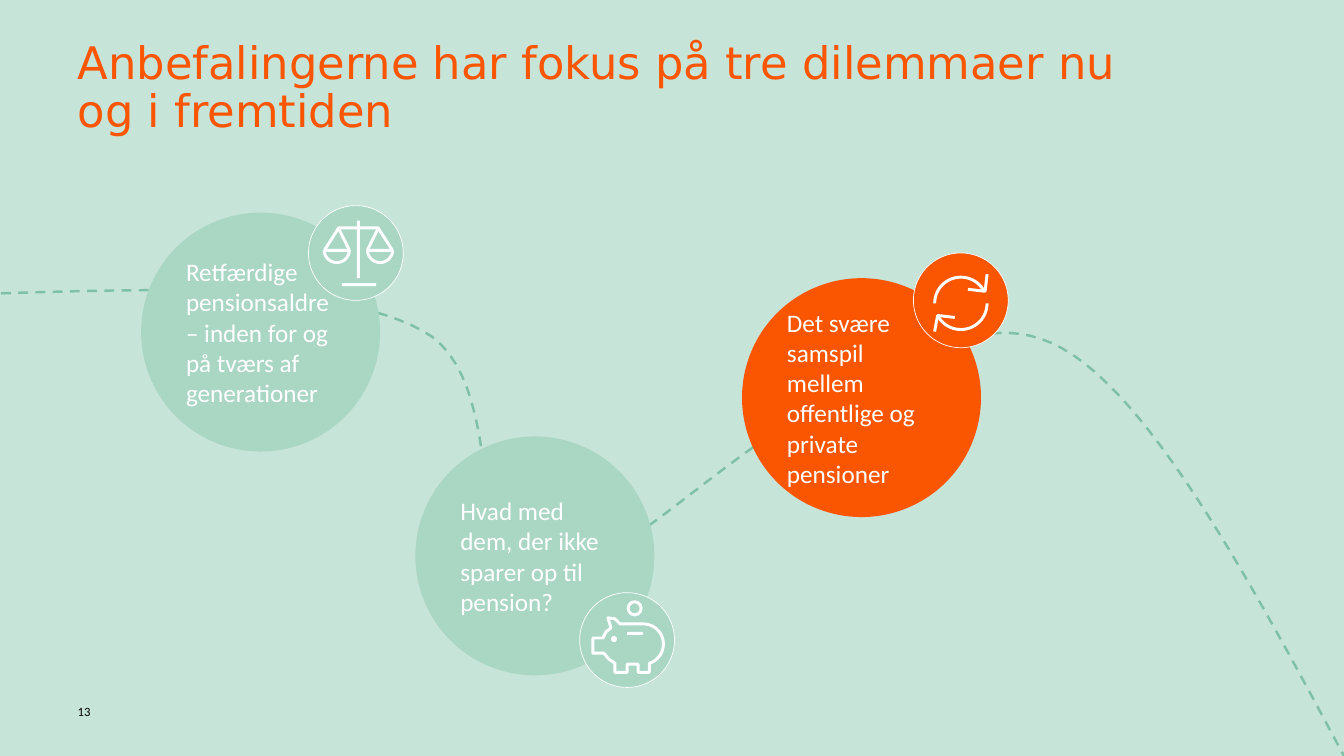
import math
from pptx import Presentation
from pptx import util as u
from pptx.dml.color import RGBColor
from pptx.enum import dml, shapes, text

MINT = RGBColor(0xC7, 0xE4, 0xD8)
SAGE = RGBColor(0xAA, 0xD6, 0xC4)
GREEN = RGBColor(0x7F, 0xC1, 0xA6)
ORANGE = RGBColor(0xFA, 0x55, 0x00)
WHITE = RGBColor(0xFF, 0xFF, 0xFF)
BLACK = RGBColor(0, 0, 0)
STROKE = 2.1

ROUTE = [
    (0.01, 2.91),
    (1.66, 2.86), (3.31, 2.81), (4.19, 3.28),
    (5.06, 3.75), (4.6, 5.63), (5.26, 5.75),
    (5.92, 5.88), (7.26, 4.4), (8.16, 4.03),
    (9.05, 3.66), (9.77, 2.94), (10.64, 3.52),
    (11.5, 4.1), (12.42, 5.8), (13.33, 7.5),
]
DILEMMAS = [
    (1.4, 2.11, SAGE, 0.1,
     "Retfærdige pensionsaldre – inden for og på tværs af generationer"),
    (4.12, 4.33, SAGE, 0.1, "Hvad med dem, der ikke sparer op til pension?"),
    (7.36, 2.76, ORANGE, 0,
     "Det svære samspil mellem\voffentlige og private pensioner"),
]
BADGES = [(3.06, 2.04, SAGE), (9.06, 2.51, ORANGE), (5.75, 5.88, SAGE)]


def style(font, size, color, name="Calibri"):
    font.name = name
    font.size = u.Pt(size)
    font.color.rgb = color


def inset(frame, left=0, top=0, right=0, bottom=0):
    frame.margin_left = u.Inches(left)
    frame.margin_top = u.Inches(top)
    frame.margin_right = u.Inches(right)
    frame.margin_bottom = u.Inches(bottom)


def curve(nodes, steps=24):
    points = [nodes[0]]
    for i in range(0, len(nodes) - 1, 3):
        a, b, c, d = nodes[i:i + 4]
        for k in range(1, steps + 1):
            t = k / steps
            s = 1 - t
            points.append(tuple(
                s**3 * p + 3 * s * s * t * q + 3 * s * t * t * r + t**3 * v
                for p, q, r, v in zip(a, b, c, d)))
    return points


def arc(x, y, radius, start, end, steps=24):
    angles = [math.radians(start + (end - start) * k / steps)
              for k in range(steps + 1)]
    return [(x + radius * math.cos(a), y + radius * math.sin(a))
            for a in angles]


def stroke(parent, points, color=WHITE, width=STROKE, close=False):
    spots = [(u.Inches(x), u.Inches(y)) for x, y in points]
    builder = parent.build_freeform(*spots[0])
    builder.add_line_segments(spots[1:], close=close)
    shape = builder.convert_to_shape()
    shape.shadow.inherit = False
    shape.fill.background()
    shape.line.color.rgb = color
    shape.line.width = u.Pt(width)
    return shape


def solid(parent, kind, x, y, wide, high, fill=None, line=None, width=0.5):
    shape = parent.add_shape(kind, *map(u.Inches, (x, y, wide, high)))
    shape.shadow.inherit = False
    if fill is None:
        shape.fill.background()
    else:
        shape.fill.solid()
        shape.fill.fore_color.rgb = fill
    if line is None:
        shape.line.fill.background()
    else:
        shape.line.color.rgb = line
        shape.line.width = u.Pt(width)
    return shape


def disc(parent, x, y, size, fill=None, line=None, width=0.5):
    return solid(parent, shapes.MSO_SHAPE.OVAL, x, y, size, size,
                 fill, line, width)


def bar(parent, x, y, wide, high):
    solid(parent, shapes.MSO_SHAPE.RECTANGLE, x, y, wide, high, WHITE)


def bubble(slide, x, y, fill, right, words):
    frame = disc(slide.shapes, x, y, 2.37, fill).text_frame
    frame.word_wrap = True
    frame.vertical_anchor = text.MSO_ANCHOR.MIDDLE
    inset(frame, 0.1, 0.05, right, 0.05)
    frame.text = words
    para = frame.paragraphs[0]
    para.alignment = text.PP_ALIGN.LEFT
    for run in para.runs:
        style(run.font, 18, WHITE)


def scales(parent):
    bar(parent, 3.54, 2.19, 0.03, 0.57)
    bar(parent, 3.39, 2.81, 0.34, 0.03)
    stroke(parent, [(3.22, 2.48), (3.36, 2.26), (3.75, 2.26), (3.89, 2.48)])
    for side in (-1, 1):
        mid = 3.555 + side * 0.215
        bar(parent, mid - 0.125, 2.47, 0.25, 0.03)
        stroke(parent, arc(mid, 2.48, 0.125, 0, 180))
        stroke(parent, [(3.555 + side * 0.19, 2.28),
                        (3.555 + side * 0.09, 2.48)])


def cycle(parent):
    stroke(parent, arc(9.53, 3.01, 0.26, 180, 333))
    stroke(parent, arc(9.53, 3.01, 0.26, 0, 153))
    stroke(parent, [(9.6, 2.87), (9.77, 2.89), (9.79, 2.72)])
    stroke(parent, [(9.27, 3.29), (9.3, 3.13), (9.47, 3.15)])


def piggy(parent):
    bar(parent, 6.22, 6.27, 0.16, 0.03)
    disc(parent, 6.23, 5.97, 0.13, line=WHITE, width=STROKE)
    disc(parent, 6.06, 6.31, 0.06, WHITE)
    body = [
        (6.44, 6.67), (6.33, 6.67), (6.33, 6.59), (6.22, 6.59),
        (6.22, 6.67), (6.1, 6.67), (6.1, 6.58), (6.04, 6.54),
        (5.99, 6.48), (5.88, 6.48), (5.88, 6.33), (5.98, 6.33),
        (6.01, 6.27), (6.06, 6.23), (6.03, 6.13), (6.1, 6.14),
        (6.15, 6.19),
    ]
    stroke(parent, body + arc(6.38, 6.39, 0.2, -90, 72), close=True)


def heading(slide, words):
    title = slide.shapes.title
    title.left, title.top, title.width, title.height = map(
        u.Inches, (0.77, 0.4, 11.8, 1.02))
    frame = title.text_frame
    frame.text = words
    frame.word_wrap = True
    frame.auto_size = text.MSO_AUTO_SIZE.NONE
    frame.vertical_anchor = text.MSO_ANCHOR.TOP
    inset(frame, right=1.13)
    para = frame.paragraphs[0]
    para.alignment = text.PP_ALIGN.LEFT
    para.line_spacing = 0.9
    style(para.runs[0].font, 32, ORANGE, "DejaVu Sans")


def number(slide, words):
    box = slide.shapes.add_textbox(*map(u.Inches, (0.77, 6.98, 0.31, 0.39)))
    frame = box.text_frame
    frame.word_wrap = True
    inset(frame)
    frame.text = words
    style(frame.paragraphs[0].runs[0].font, 9, BLACK)


def main():
    deck = Presentation()
    deck.slide_width = u.Inches(13.33)
    deck.slide_height = u.Inches(7.5)
    slide = deck.slides.add_slide(deck.slide_layouts[5])
    slide.background.fill.solid()
    slide.background.fill.fore_color.rgb = MINT
    number(slide, "13")
    route = stroke(slide.shapes, curve(ROUTE), GREEN, 1.75)
    route.line.dash_style = dml.MSO_LINE.DASH
    heading(slide,
            "Anbefalingerne har fokus på tre dilemmaer nu og i fremtiden")
    for item in DILEMMAS:
        bubble(slide, *item)
    for (x, y, fill), icon in zip(BADGES, (scales, cycle, piggy)):
        disc(slide.shapes, x, y, 0.94, fill, WHITE)
        icon(slide.shapes.add_group_shape().shapes)
    deck.save("out.pptx")


if __name__ == "__main__":
    main()
